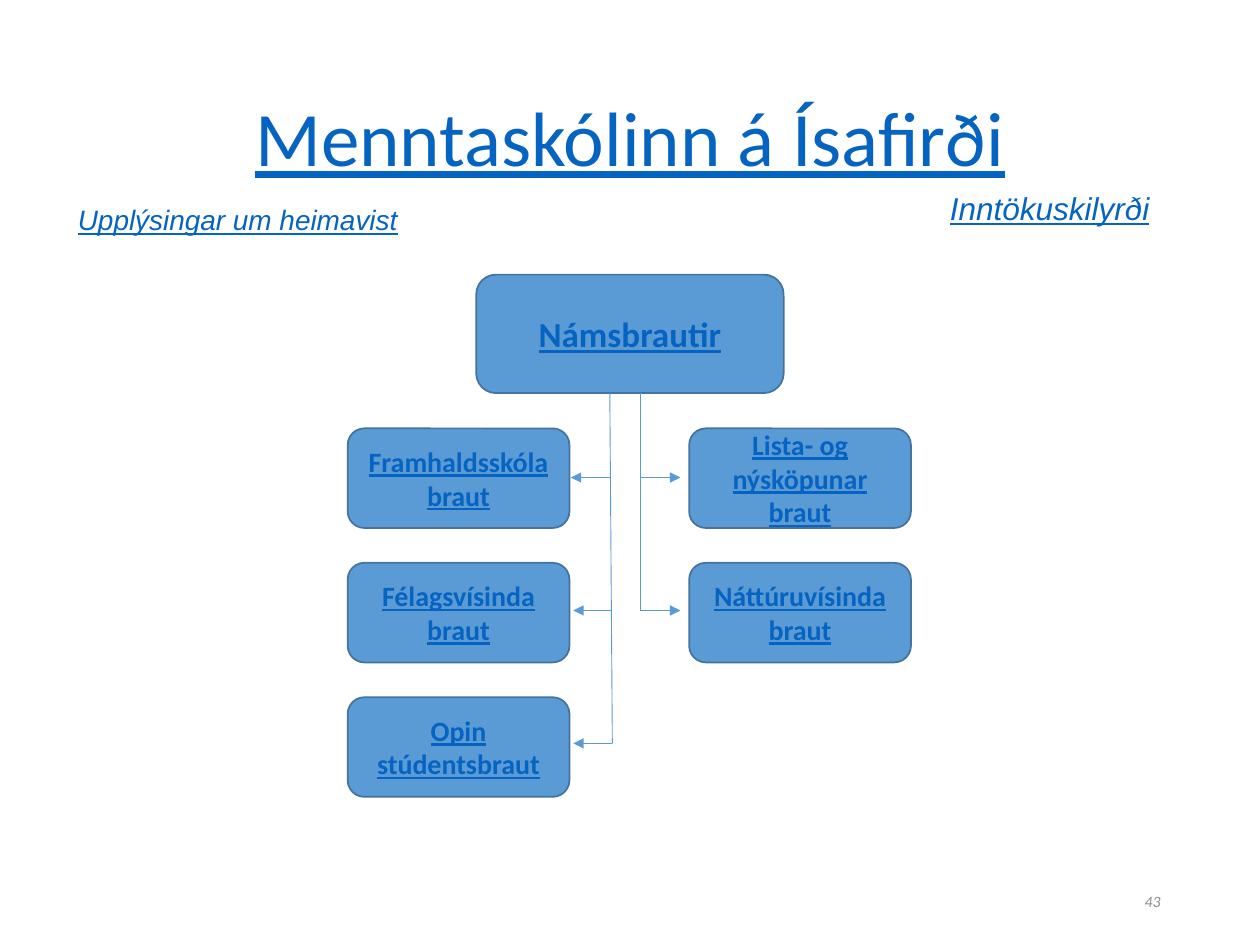
from dataclasses import dataclass

from lxml import etree
from pptx import Presentation, util as u
from pptx.dml.color import RGBColor
from pptx.enum import shapes, text
from pptx.oxml import ns


@dataclass(frozen=True)
class Theme:
    link: str = "0563C1"
    box: str = "5B9BD5"
    border: str = "43739E"
    muted: str = "8C8C8C"
    heading_font: str = "Calibri"
    note_font: str = "Arial"
    title: int = 44
    root: int = 20
    note: int = 18
    branch: int = 16
    number: int = 9
    border_width: float = 1
    line_width: float = 0.5


class Chart:
    COLUMNS, ROWS = 100, 75

    def __init__(self, deck, theme):
        self.theme = theme
        self.width, self.height = deck.slide_width, deck.slide_height
        self.slide = deck.slides.add_slide(deck.slide_layouts[5])

    def x(self, columns):
        return round(self.width * columns / self.COLUMNS)

    def y(self, rows):
        return round(self.height * rows / self.ROWS)

    def place(self, left, top, width, height):
        return self.x(left), self.y(top), self.x(width), self.y(height)

    def label(self, shape, words, size, color, family, align,
              anchor=text.MSO_ANCHOR.MIDDLE, bold=False, italic=False, underline=True):
        frame = shape.text_frame
        frame.word_wrap = True
        frame.vertical_anchor = anchor
        frame.text = words
        paragraph = frame.paragraphs[0]
        paragraph.alignment = align
        font = paragraph.font
        font.name, font.size = family, u.Pt(size)
        font.bold, font.italic, font.underline = bold, italic, underline
        font.color.rgb = RGBColor.from_string(color)
        return paragraph

    def title(self, words, *area):
        heading = self.slide.shapes.title
        heading.left, heading.top, heading.width, heading.height = self.place(*area)
        paragraph = self.label(heading, words, self.theme.title, self.theme.link,
                               self.theme.heading_font, text.PP_ALIGN.CENTER)
        paragraph.line_spacing = 0.9

    def note(self, words, size, *area):
        remark = self.slide.shapes.add_textbox(*self.place(*area))
        self.label(remark, words, size, self.theme.link, self.theme.note_font,
                   text.PP_ALIGN.LEFT, text.MSO_ANCHOR.TOP, italic=True)

    def page_number(self, number, *area):
        footer = self.slide.shapes.add_textbox(*self.place(*area))
        self.label(footer, number, self.theme.number, self.theme.muted,
                   self.theme.heading_font, text.PP_ALIGN.RIGHT,
                   italic=True, underline=False)

    def box(self, words, size, *area):
        node = self.slide.shapes.add_shape(
            shapes.MSO_SHAPE.ROUNDED_RECTANGLE, *self.place(*area))
        node.shadow.inherit = False
        node.fill.solid()
        node.fill.fore_color.rgb = RGBColor.from_string(self.theme.box)
        node.line.color.rgb = RGBColor.from_string(self.theme.border)
        node.line.width = u.Pt(self.theme.border_width)
        self.label(node, words, size, self.theme.link, self.theme.heading_font,
                   text.PP_ALIGN.CENTER, bold=True)

    def line(self, start, end, arrow=False):
        link = self.slide.shapes.add_connector(
            shapes.MSO_CONNECTOR.STRAIGHT,
            self.x(start[0]), self.y(start[1]), self.x(end[0]), self.y(end[1]))
        link.line.color.rgb = RGBColor.from_string(self.theme.box)
        link.line.width = u.Pt(self.theme.line_width)
        properties = link.element.spPr
        if arrow:
            stroke = properties.find(ns.qn("a:ln"))
            etree.SubElement(stroke, ns.qn("a:tailEnd"), type="triangle")
        etree.SubElement(properties, ns.qn("a:effectLst"))


def main():
    deck = Presentation()
    deck.slide_width, deck.slide_height = u.Inches(10), u.Inches(7.5)
    theme = Theme()
    chart = Chart(deck, theme)

    chart.title("Menntaskólinn á Ísafirði", 6.9, 4, 86.2, 14.5)
    chart.note("Inntökuskilyrði", theme.note, 74.4, 14.5, 24, 4)
    chart.note("Upplýsingar um heimavist", theme.branch, 5.2, 15.6, 35.4, 3.7)
    chart.page_number("43", 70.6, 69.5, 22.5, 4)
    chart.box("Námsbrautir", theme.root, 37.8, 21.8, 24.4, 9.4)

    left_branches = ["Framhaldsskóla braut", "Félagsvísinda braut", "Opin stúdentsbraut"]
    right_branches = ["Lista- og nýsköpunar braut", "Náttúruvísinda braut"]
    first_box, box_step = 34, 10.67
    first_arrow, arrow_step = 37.9, 10.55
    stem_top = 31.2

    sides = [
        (left_branches, 27.6, [(48.4, 45.3), (48.6, 45.5), (48.6, 45.5)]),
        (right_branches, 54.7, [(50.8, 54)] * 2),
    ]
    for branches, box_left, arrows in sides:
        for row, (branch, (stem, tip)) in enumerate(zip(branches, arrows)):
            chart.box(branch, theme.branch, box_left, first_box + row * box_step, 17.6, 7.9)
            level = first_arrow + row * arrow_step
            chart.line((stem, level), (tip, level), arrow=True)
        chart.line((arrows[0][0], stem_top), (stem, level))

    deck.save("out.pptx")


if __name__ == "__main__":
    main()
